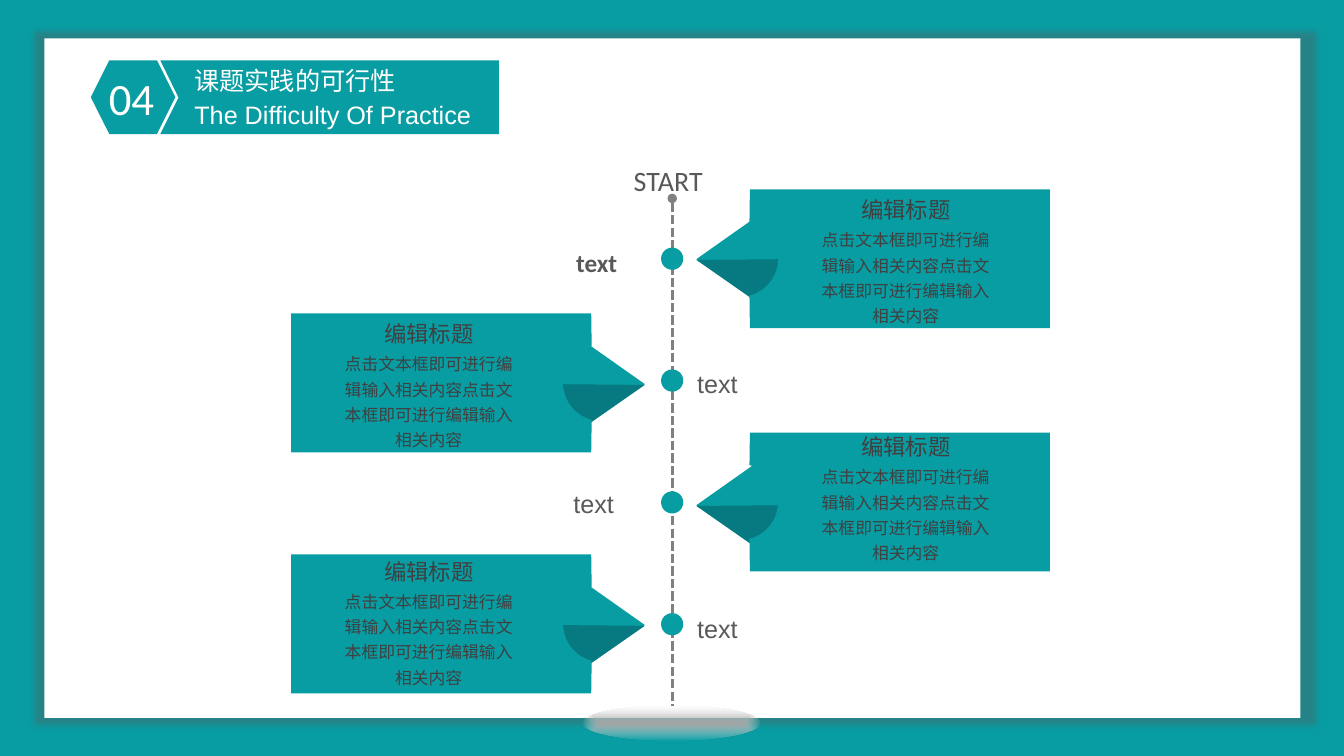
from math import asin, cos, sin
from lxml import etree
from pptx import Presentation
from pptx.dml.color import RGBColor
from pptx.enum.dml import MSO_LINE
from pptx.enum.shapes import MSO_CONNECTOR, MSO_SHAPE
from pptx.enum.text import MSO_AUTO_SIZE, PP_ALIGN
from pptx.oxml import parse_xml
from pptx.oxml.ns import nsdecls, qn
from pptx.util import Cm, Pt

TEAL = RGBColor(0x08, 0x9D, 0xA3)
DARK_TEAL = RGBColor(0x06, 0x7A, 0x80)
WHITE = RGBColor(0xFF, 0xFF, 0xFF)
GRAY = RGBColor(0x80, 0x80, 0x80)
LABEL = RGBColor(0x59, 0x59, 0x59)
INK = RGBColor(0x40, 0x40, 0x40)
CJK = "Noto Sans CJK SC"
BODY = "点击文本框即可进行编辑输入相关内容点击文本框即可进行编辑输入相关内容"

prs = Presentation()
prs.slide_width, prs.slide_height = Cm(33.87), Cm(19.05)
s = prs.slides.add_slide(prs.slide_layouts[6])
s.background.fill.solid()
s.background.fill.fore_color.rgb = TEAL


def add_filled(outline, color, x=0, y=0, w=0, h=0):
    """Add a preset shape, or a polygon when outline is a list of points."""
    if isinstance(outline, list):
        points = [(Cm(px), Cm(py)) for px, py in outline]
        fb = s.shapes.build_freeform(*points[0])
        fb.add_line_segments(points[1:], close=True)
        sp = fb.convert_to_shape()
    else:
        sp = s.shapes.add_shape(outline, Cm(x), Cm(y), Cm(w), Cm(h))
    sp.shadow.inherit = False
    sp.fill.solid()
    sp.fill.fore_color.rgb = color
    sp.line.fill.background()
    return sp


def add_text(text, x, y, w, h, size, color, font="Arial", align=PP_ALIGN.LEFT,
             spacing=1.0, bold=False, wrap=True):
    tf = s.shapes.add_textbox(Cm(x), Cm(y), Cm(w), Cm(h)).text_frame
    tf.word_wrap = wrap
    tf.auto_size = MSO_AUTO_SIZE.SHAPE_TO_FIT_TEXT
    p = tf.paragraphs[0]
    p.alignment, p.line_spacing = align, spacing
    r = p.add_run()
    r.text = text
    r.font.size, r.font.bold, r.font.name = Pt(size), bold, font
    r.font.color.rgb = color
    etree.SubElement(r._r.get_or_add_rPr(), qn("a:ea"), typeface=font)


# White panel with a slightly enlarged soft shadow
panel = add_filled(MSO_SHAPE.RECTANGLE, WHITE, 1.12, 0.97, 31.65, 17.12)
effects = panel._element.spPr.find(qn("a:effectLst"))
effects.append(parse_xml(
    f'<a:outerShdw {nsdecls("a")} blurRad="50800" dist="25400" dir="0" '
    'sx="102000" sy="102000" algn="ctr" rotWithShape="0">'
    '<a:srgbClr val="595959"><a:alpha val="36000"/></a:srgbClr></a:outerShdw>'))

# Heading
add_filled([(4.04, 1.52), (12.57, 1.52), (12.57, 3.38), (4.04, 3.38), (4.5, 2.46)], TEAL)
add_filled(MSO_SHAPE.HEXAGON, TEAL, 2.29, 1.52, 2.13, 1.86)
add_text("04", 2.21, 1.65, 2.21, 1.63, 32, WHITE, "Calibri", PP_ALIGN.CENTER)
add_text("课题实践的可行性", 4.65, 1.52, 13.77, 1.02, 18, WHITE, CJK)
add_text("The Difficulty Of Practice", 4.65, 2.39, 13.94, 1.02, 18, WHITE)

# Timeline axis and its base
AXIS = 16.94
axis = s.shapes.add_connector(MSO_CONNECTOR.STRAIGHT, Cm(AXIS), Cm(5), Cm(AXIS), Cm(17.78))
axis.line.color.rgb = GRAY
axis.line.width = Pt(2.25)
axis.line.dash_style = MSO_LINE.SQUARE_DOT
etree.SubElement(axis.line._get_or_add_ln(), qn("a:headEnd"), type="oval")
etree.SubElement(axis._element.spPr, qn("a:effectLst"))
base = add_filled(MSO_SHAPE.OVAL, GRAY, 14.68, 17.78, 4.47, 0.89)
solid = base._element.spPr.find(qn("a:solidFill"))
solid.getparent().replace(solid, parse_xml(
    f'<a:gradFill {nsdecls("a")} rotWithShape="1"><a:gsLst>'
    '<a:gs pos="0"><a:srgbClr val="A5A5A5"/></a:gs>'
    '<a:gs pos="100000"><a:srgbClr val="E7E6E6"><a:alpha val="0"/></a:srgbClr></a:gs>'
    '</a:gsLst><a:path path="shape"><a:fillToRect l="50000" t="50000" r="50000" b="50000"/>'
    '</a:path></a:gradFill>'))
add_text("START", 15.72, 3.99, 2.62, 1.02, 20, LABEL, "Calibri", wrap=False)

# Milestones: side (1 right, -1 left), card top, pointer centre, title top, label left, label top
milestones = [
    (1, 4.77, 6.53, 4.83, 14.27, 5.87),
    (-1, 7.9, 9.68, 7.95, 17.32, 8.92),
    (1, 10.9, 12.73, 10.8, 14.2, 11.96),
    (-1, 13.97, 15.75, 13.94, 17.32, 15.11),
]
CARD_W, CARD_H = 7.56, 3.5
DOT, FIRST_DOT, DOT_STEP = 0.56, 6.52, 3.07
POINTER_W, POINTER_H = 3.23, 2.29
NOTCH_R, NOTCH_HALF, NOTCH_DEPTH = 0.96, 0.93, 0.71

for i, (side, top, mid, title_top, label_x, label_y) in enumerate(milestones):
    inner = 18.9 if side > 0 else 14.9
    outer = inner + side * CARD_W
    tip = inner - side * 1.35
    back = tip + side * POINTER_H

    # Dot on the axis
    add_filled(MSO_SHAPE.OVAL, TEAL, AXIS - DOT / 2, FIRST_DOT + i * DOT_STEP - DOT / 2, DOT, DOT)

    # Pointer and its darker lower half
    pointer = add_filled(MSO_SHAPE.ISOSCELES_TRIANGLE, TEAL, (tip + back - POINTER_W) / 2,
                         mid - POINTER_H / 2, POINTER_W, POINTER_H)
    pointer.rotation = -90 * side % 360
    add_filled([(back, mid + POINTER_W / 2), (tip, mid + 0.02), (back, mid)], DARK_TEAL)

    # Card with a round notch around the pointer
    swing = asin(NOTCH_HALF / NOTCH_R)
    notch_x, notch_y = inner + side * (NOTCH_DEPTH - NOTCH_R), top + 1.75
    notch = [(notch_x + side * NOTCH_R * cos(swing * k / 12),
              notch_y + NOTCH_R * sin(swing * k / 12)) for k in range(12, -13, -1)]
    add_filled([(inner, top), (outer, top), (outer, top + CARD_H), (inner, top + CARD_H)] + notch,
               TEAL)

    # Card text and label
    text_x = 20.4 if side > 0 else 8.38
    add_text(BODY, text_x, title_top + 0.72, 4.85, 2.82, 12, INK, CJK, PP_ALIGN.CENTER, 1.25)
    add_text("编辑标题", text_x + 0.79, title_top, 3.28, 0.94, 16, INK, CJK, PP_ALIGN.CENTER)
    first = i == 0
    add_text("text", label_x, label_y, 2.51, 1.07, 18, LABEL, "Calibri" if first else "Arial",
             PP_ALIGN.JUSTIFY, 1.3, bold=first)

prs.save("out.pptx")
